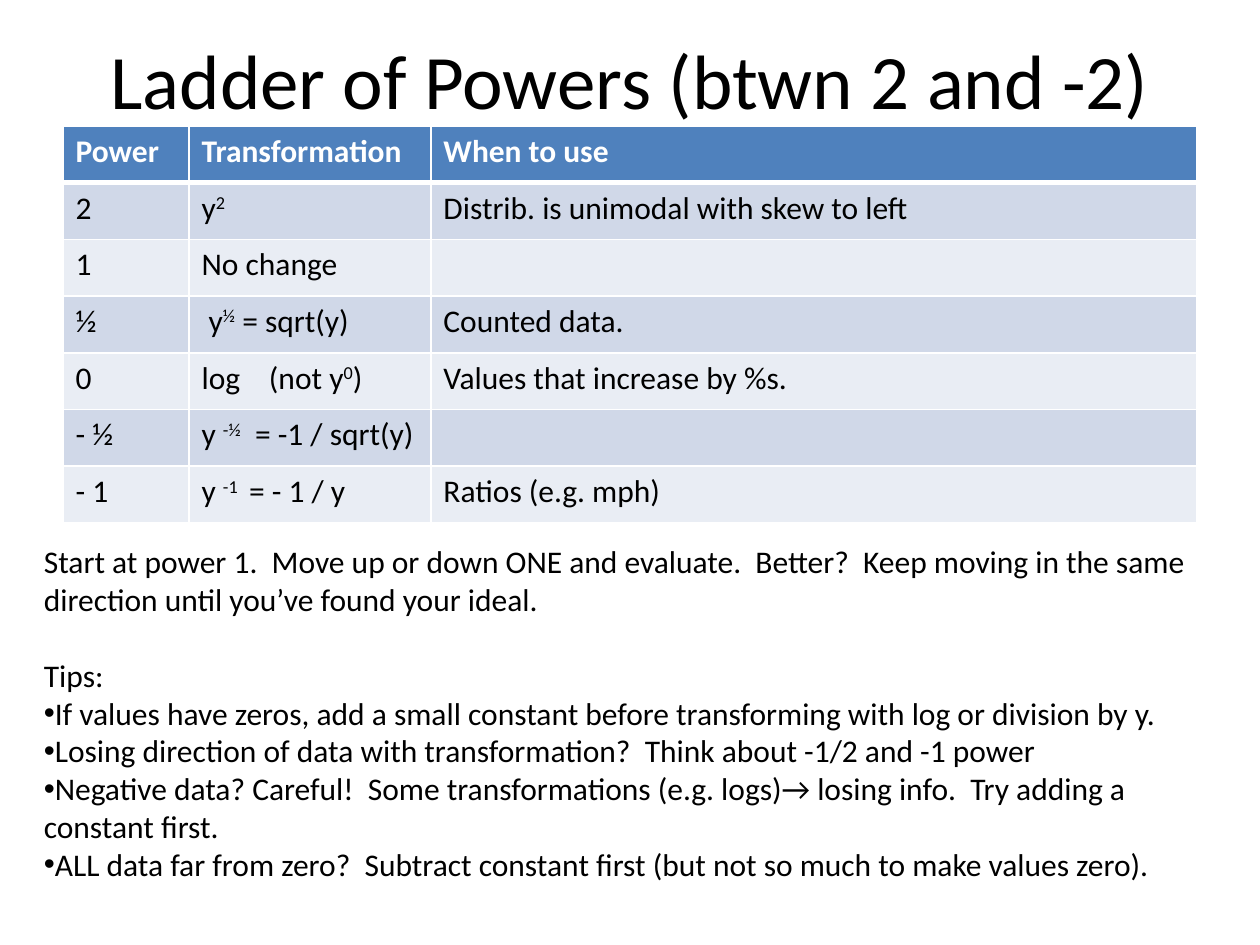
from typing import NamedTuple

import pptx
import pptx.dml.color
import pptx.enum.text
import pptx.oxml
import pptx.oxml.ns
import pptx.util
from lxml import etree

Pt = pptx.util.Pt
RGBColor = pptx.dml.color.RGBColor
qn = pptx.oxml.ns.qn

BLACK = RGBColor(0x00, 0x00, 0x00)
WHITE = RGBColor(0xFF, 0xFF, 0xFF)
BLUE = RGBColor(0x4F, 0x81, 0xBD)
BANDS = (RGBColor(0xD0, 0xD8, 0xE8), RGBColor(0xE9, 0xED, 0xF4))
FONT = "Calibri"
BODY = 18
LINE = 22


class Rung(NamedTuple):
    power: str
    form: str
    use: str


HEAD = Rung("Power", "Transformation", "When to use")
# Text between carets is raised.
RUNGS = (
    Rung("2", "y^2^", "Distrib. is unimodal with skew to left"),
    Rung("1", "No change", ""),
    Rung("½", " y^½^ = sqrt(y)", "Counted data."),
    Rung("0", "log\t(not y^0^)", "Values that increase by %s."),
    Rung("- ½", "y ^-½^  = -1 / sqrt(y)", ""),
    Rung("- 1", "y ^-1 ^ = - 1 / y", "Ratios (e.g. mph)"),
)
WIDTHS = (72, 138.24, 437.76)
HIGH = 32.4
TAB = 38.5

START = (
    "Start at power 1.  Move up or down ONE and evaluate.  Better?  "
    "Keep moving in the same direction until you’ve found your ideal."
)
TIPS = (
    "If values have zeros, add a small constant before transforming with log or division by y.",
    "Losing direction of data with transformation?  Think about -1/2 and -1 power",
    "Negative data? Careful!  Some transformations (e.g. logs)→ losing info.  "
    "Try adding a constant first.",
    "ALL data far from zero?  Subtract constant first (but not so much to make values zero).",
)


def style(run, size: float, color: RGBColor = BLACK, bold: bool = False) -> None:
    font = run.font
    font.name, font.size, font.bold = FONT, Pt(size), bold
    font.color.rgb = color


def add_box(slide, left: float, top: float, width: float, height: float):
    box = slide.shapes.add_textbox(Pt(left), Pt(top), Pt(width), Pt(height))
    box.text_frame.word_wrap = True
    return box.text_frame


def add_title(slide) -> None:
    frame = add_box(slide, 36, 0, 648, 90)
    frame.vertical_anchor = pptx.enum.text.MSO_ANCHOR.MIDDLE
    frame.text = "Ladder of Powers (btwn 2 and -2)"
    para = frame.paragraphs[0]
    para.alignment = pptx.enum.text.PP_ALIGN.CENTER
    style(para.runs[0], 44)


def set_edges(cell, top: float, bottom: float) -> None:
    """Give the cell white borders; they must come before its fill."""
    props = cell._tc.get_or_add_tcPr()
    edges = (("a:lnL", 1), ("a:lnR", 1), ("a:lnT", top), ("a:lnB", bottom))
    for place, (tag, width) in enumerate(edges):
        edge = etree.Element(qn(tag), w=str(Pt(width)))
        fill = etree.SubElement(edge, qn("a:solidFill"))
        etree.SubElement(fill, qn("a:srgbClr"), val=str(WHITE))
        props.insert(place, edge)


def set_tab(para, pos: float) -> None:
    stops = etree.SubElement(para._p.get_or_add_pPr(), qn("a:tabLst"))
    etree.SubElement(stops, qn("a:tab"), pos=str(Pt(pos)), algn="l")


def fill_cell(cell, text: str, row: int) -> None:
    head = row == 0
    cell.fill.solid()
    cell.fill.fore_color.rgb = BLUE if head else BANDS[(row - 1) % 2]
    set_edges(cell, 3 if row == 1 else 1, 3 if head else 1)
    para = cell.text_frame.paragraphs[0]
    if "\t" in text:
        set_tab(para, TAB)
    if not text:
        para.font.size = Pt(BODY)
        return
    for index, part in enumerate(text.split("^")):
        if part:
            run = para.add_run()
            run.text = part
            style(run, BODY, WHITE if head else BLACK, head)
            if index % 2:
                run.font._element.set("baseline", "30000")


def add_ladder(slide) -> None:
    rows = (HEAD, *RUNGS)
    frame = slide.shapes.add_table(
        len(rows), len(WIDTHS), Pt(36), Pt(72), Pt(sum(WIDTHS)), Pt(HIGH * len(rows))
    )
    table = frame.table
    table.horz_banding = False
    for col, width in zip(table.columns, WIDTHS):
        col.width = Pt(width)
    for row, rung in enumerate(rows):
        table.rows[row].height = Pt(HIGH)
        for col, text in enumerate(rung):
            fill_cell(table.cell(row, col), text, row)


def add_tips(slide) -> None:
    frame = add_box(slide, 18, 306, 684, 234)
    frame.auto_size = pptx.enum.text.MSO_AUTO_SIZE.SHAPE_TO_FIT_TEXT
    frame.text = "\n".join((START, "Tips:", *TIPS))
    for para in frame.paragraphs:
        style(para.runs[0], BODY)
    frame.paragraphs[1].space_before = Pt(LINE)
    for para in frame.paragraphs[2:]:
        props = para._p.get_or_add_pPr()
        etree.SubElement(props, qn("a:buFont"), typeface="Arial")
        etree.SubElement(props, qn("a:buChar"), char="•")


def main() -> None:
    deck = pptx.Presentation()
    deck.slide_width, deck.slide_height = Pt(720), Pt(540)
    slide = deck.slides.add_slide(deck.slide_layouts[6])
    add_title(slide)
    add_ladder(slide)
    add_tips(slide)
    deck.save("out.pptx")


if __name__ == "__main__":
    main()
